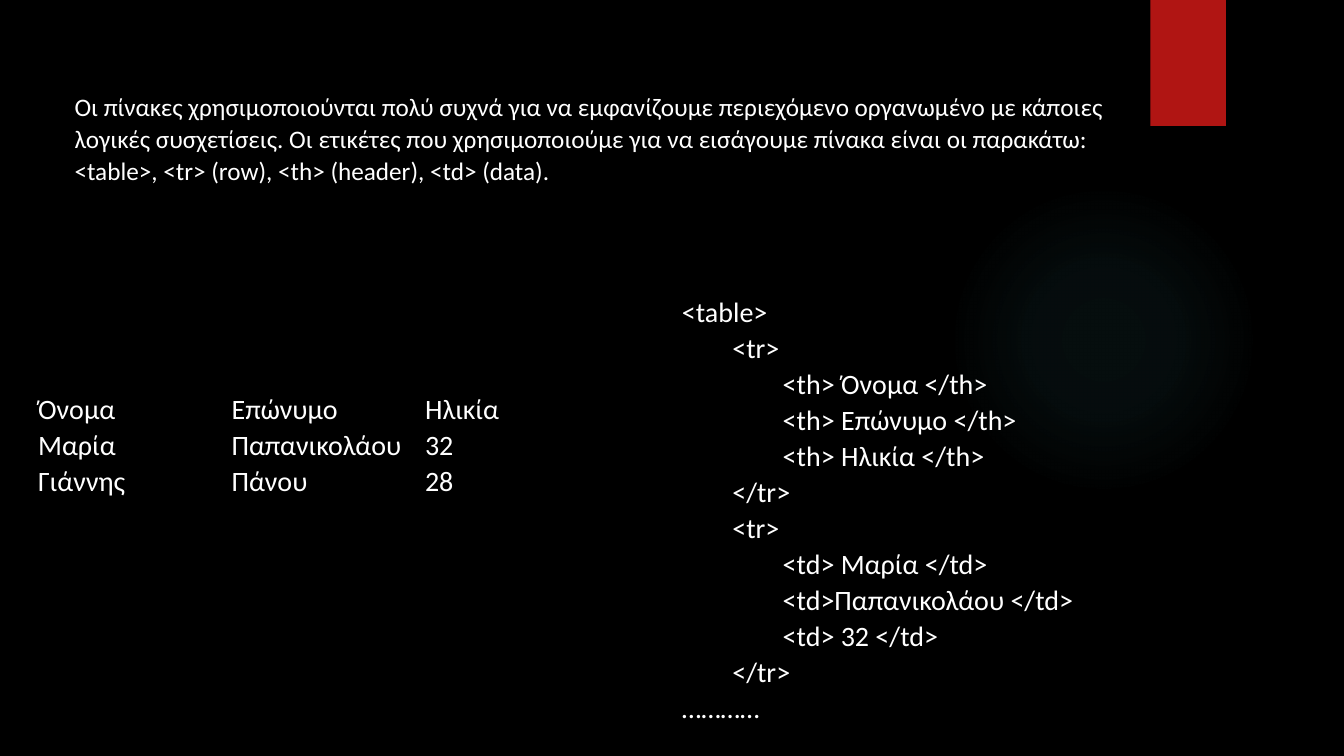
"""Build a dark slide that introduces HTML tables with a sample table and its markup."""
from dataclasses import dataclass

from pptx import Presentation
from pptx import util as u
from pptx.dml.color import RGBColor
from pptx.enum import shapes, text
from pptx.oxml import parse_xml
from pptx.oxml.ns import nsdecls


@dataclass(frozen=True)
class Theme:
    background: str = "000000"
    ink: str = "FFFFFF"
    accent: str = "B01513"
    glow: str = "50B9C1"
    font: str = "Calibri"
    body_size: int = 18
    sample_size: int = 20
    line_spacing: float = 1.07
    tab_step: float = 0.5


class SlideBuilder:
    COLUMNS, ROWS = 32, 18

    def __init__(self, presentation, theme):
        self.theme = theme
        self.column = presentation.slide_width / self.COLUMNS
        self.row = presentation.slide_height / self.ROWS
        self.slide = presentation.slides.add_slide(presentation.slide_layouts[6])
        fill = self.slide.background.fill
        fill.solid()
        fill.fore_color.rgb = RGBColor.from_string(theme.background)

    def place(self, left, top, width, height):
        return (round(left * self.column), round(top * self.row),
                round(width * self.column), round(height * self.row))

    def shape(self, kind, grid):
        shape = self.slide.shapes.add_shape(kind, *self.place(*grid))
        shape.shadow.inherit = False
        shape.line.fill.background()
        return shape

    def glow(self, *grid):
        shape = self.shape(shapes.MSO_SHAPE.OVAL, grid)
        stops = "".join(
            f'<a:gs pos="{position * 1000}"><a:srgbClr val="{self.theme.glow}">'
            f'<a:alpha val="{alpha * 1000}"/></a:srgbClr></a:gs>'
            for position, alpha in ((0, 7), (36, 6), (69, 0)))
        gradient = parse_xml(
            f'<a:gradFill {nsdecls("a")} rotWithShape="1"><a:gsLst>{stops}</a:gsLst>'
            '<a:path path="circle"><a:fillToRect l="50000" t="50000" r="50000" b="50000"/>'
            '</a:path></a:gradFill>')
        properties = shape._element.spPr
        properties.insert(properties.index(properties.prstGeom) + 1, gradient)

    def ribbon(self, *grid):
        shape = self.shape(shapes.MSO_SHAPE.RECTANGLE, grid)
        shape.fill.solid()
        shape.fill.fore_color.rgb = RGBColor.from_string(self.theme.accent)
        shadow = parse_xml(
            f'<a:outerShdw {nsdecls("a")} blurRad="{u.Pt(3)}" dist="{u.Pt(2)}" dir="5400000" '
            'rotWithShape="0"><a:srgbClr val="000000"><a:alpha val="45000"/></a:srgbClr>'
            '</a:outerShdw>')
        shape._element.spPr.find("{*}effectLst").append(shadow)

    def format(self, paragraph, size):
        paragraph.line_spacing = self.theme.line_spacing
        for run in paragraph.runs:
            run.font.name = self.theme.font
            run.font.size = u.Pt(size)
            run.font.color.rgb = RGBColor.from_string(self.theme.ink)

    def text(self, content, size, *grid):
        frame = self.slide.shapes.add_textbox(*self.place(*grid)).text_frame
        frame.word_wrap = True
        frame.auto_size = text.MSO_AUTO_SIZE.SHAPE_TO_FIT_TEXT
        frame.text = content
        for paragraph in frame.paragraphs:
            depth = paragraph.text.count("\t")
            if depth:
                tabs = "".join(f'<a:tab pos="{u.Inches(self.theme.tab_step * step)}" algn="l"/>'
                               for step in range(1, depth + 1))
                paragraph._p.get_or_add_pPr().append(
                    parse_xml(f'<a:tabLst {nsdecls("a")}>{tabs}</a:tabLst>'))
            self.format(paragraph, size)

    def table(self, records, *grid):
        frame = self.slide.shapes.add_table(len(records), len(records[0]), *self.place(*grid))
        table = frame.table
        table.first_row = table.horz_banding = False
        for row, record in enumerate(records):
            for column, value in enumerate(record):
                cell = table.cell(row, column)
                cell.margin_left = cell.margin_right = u.Inches(0.07)
                cell.margin_top = cell.margin_bottom = 0
                cell.text_frame.text = value
                self.format(cell.text_frame.paragraphs[0], self.theme.sample_size)
                cell.fill.background()
                self.border(cell)

    def border(self, cell):
        properties = cell._tc.get_or_add_tcPr()
        for index, side in enumerate("LRTB"):
            properties.insert(index, parse_xml(
                f'<a:ln{side} {nsdecls("a")} w="{u.Pt(1)}"><a:solidFill>'
                f'<a:srgbClr val="{self.theme.background}"/></a:solidFill></a:ln{side}>'))


INTRODUCTION = (
    "Οι πίνακες χρησιμοποιούνται πολύ συχνά για να εμφανίζουμε περιεχόμενο οργανωμένο με "
    "κάποιες λογικές συσχετίσεις. Οι ετικέτες που χρησιμοποιούμε για να εισάγουμε πίνακα "
    "είναι οι παρακάτω: <table>, <tr> (row), <th> (header), <td> (data).")

PEOPLE = [
    ("Όνομα", "Επώνυμο", "Ηλικία"),
    ("Μαρία", "Παπανικολάου", "32"),
    ("Γιάννης", "Πάνου", "28"),
]

MARKUP = "\n".join([
    "<table>",
    "\t<tr>",
    "\t\t<th> Όνομα </th>",
    "\t\t<th> Επώνυμο </th>",
    "\t\t<th> Ηλικία </th>",
    "\t</tr>",
    "\t<tr>",
    "\t\t<td> Μαρία </td>",
    "\t\t<td>Παπανικολάου </td>",
    "\t\t<td> 32 </td>",
    "\t</tr>",
    "…………",
])


def main():
    presentation = Presentation()
    presentation.slide_width = u.Inches(13.33)
    presentation.slide_height = u.Inches(7.5)
    theme = Theme()
    slide = SlideBuilder(presentation, theme)
    slide.glow(22.58, 4.39, 7.39, 7.39)
    slide.ribbon(27.39, 0, 1.8, 3)
    slide.text(INTRODUCTION, theme.body_size, 1.54, 2, 26.04, 2.54)
    slide.table(PEOPLE, 0.74, 9.29, 13.82, 2.4)
    slide.text(MARKUP, theme.sample_size, 16, 6.84, 16, 10.58)
    presentation.save("out.pptx")


if __name__ == "__main__":
    main()
